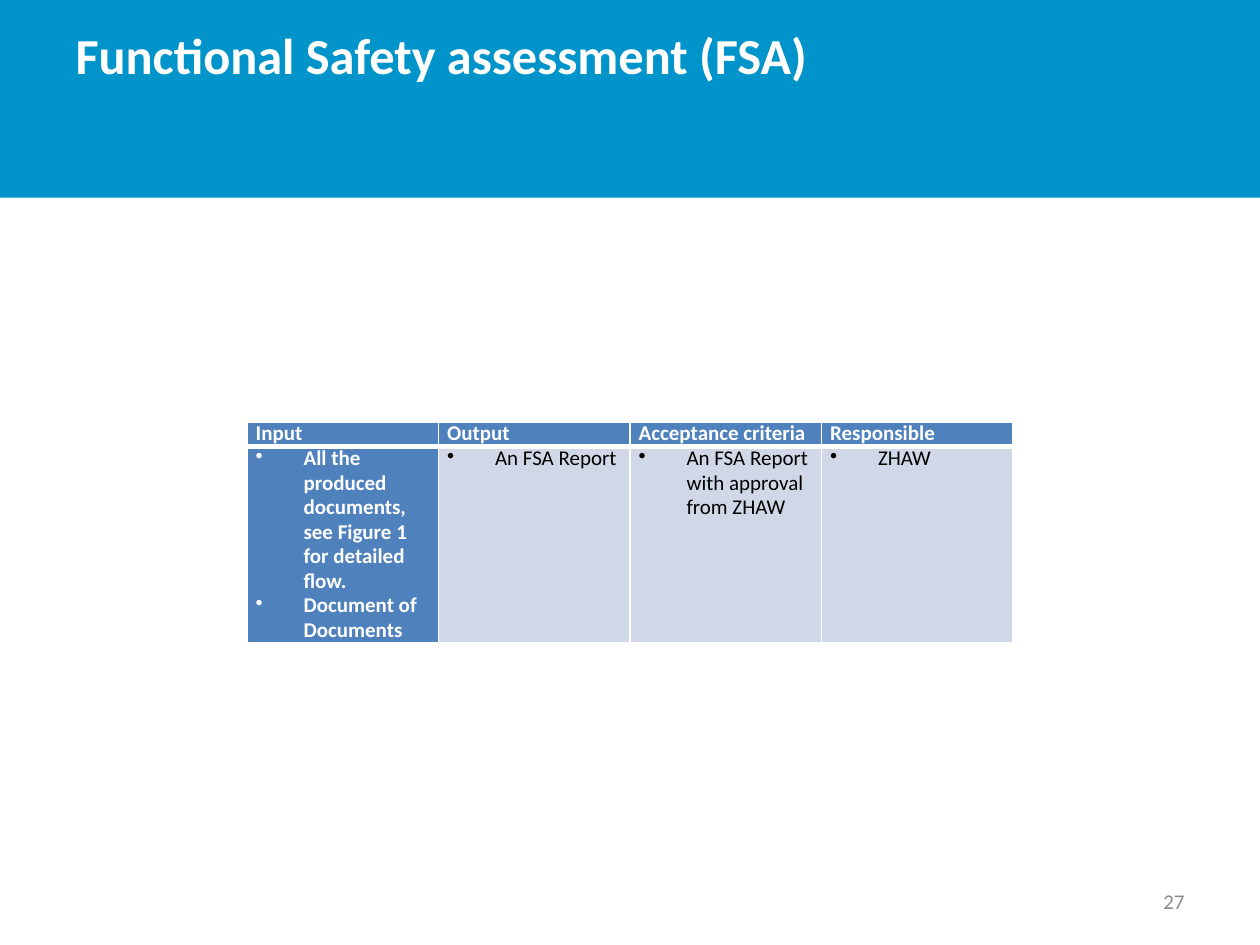
from lxml.etree import SubElement
from pptx import Presentation
from pptx.dml.color import RGBColor
from pptx.enum.shapes import MSO_SHAPE
from pptx.enum.text import MSO_ANCHOR, PP_ALIGN
from pptx.oxml import parse_xml
from pptx.oxml.ns import nsdecls, qn
from pptx.util import Inches, Pt

COLORS = {"band": "0094CA", "head": "4F81BD", "cell": "D0D8E8",
          "white": "FFFFFF", "black": "000000", "gray": "8C8C8C"}


def style(par, size, color, bold=False):
    font = par.font
    for key, value in {"name": "Calibri", "size": Pt(size), "bold": bold}.items():
        setattr(font, key, value)
    font.color.rgb = RGBColor.from_string(COLORS[color])


def edge(cell, widths):
    """Draw white cell borders; widths maps each side to points."""
    props = cell._tc.get_or_add_tcPr()
    for spot, (side, width) in enumerate(widths.items()):
        props.insert(spot, parse_xml(
            f'<a:ln{side} {nsdecls("a")} w="{Pt(width)}"><a:solidFill>'
            f'<a:srgbClr val="{COLORS["white"]}"/></a:solidFill></a:ln{side}>'))


deck = Presentation()
deck.slide_width, deck.slide_height = Inches(10), Inches(7.5)
slide = deck.slides.add_slide(deck.slide_layouts[5])

# Title on a band
title = slide.shapes.title
band = slide.shapes.add_shape(MSO_SHAPE.RECTANGLE, 0, 0, Inches(10), Inches(1.57))
band.shadow.inherit = False
band.fill.solid()
band.fill.fore_color.rgb = RGBColor.from_string(COLORS["band"])
band.line.fill.background()
title.element.addprevious(band.element)

title.left, title.top = Inches(0.5), Inches(0.19)
title.width, title.height = Inches(7.81), Inches(1.36)
frame = title.text_frame
frame.text = "Functional Safety assessment (FSA)"
frame.vertical_anchor = MSO_ANCHOR.TOP
frame.margin_top = 0
frame.paragraphs[0].alignment = PP_ALIGN.LEFT
style(frame.paragraphs[0], 28.8, "white", True)

# Table
columns = {
    "Input": ["All the produced documents, see Figure 1 for detailed flow.",
              "Document of Documents"],
    "Output": ["An FSA Report"],
    "Acceptance criteria": ["An FSA Report with approval from ZHAW"],
    "Responsible": ["ZHAW"],
}
table = slide.shapes.add_table(2, len(columns), Inches(1.96), Inches(3.35),
                               Inches(6.08), Inches(1.75)).table
for row, height in zip(table.rows, (0.19, 1.56)):
    row.height = Inches(height)

for col, (head, items) in enumerate(columns.items()):
    table.columns[col].width = Inches(1.52)
    for row, lines in enumerate(([head], items)):
        cell = table.cell(row, col)
        strong = row == 0 or col == 0
        cell.fill.solid()
        cell.fill.fore_color.rgb = RGBColor.from_string(
            COLORS["head" if strong else "cell"])
        cell.margin_left = cell.margin_right = Inches(0.07)
        cell.margin_top = cell.margin_bottom = 0
        edge(cell, {"L": 1, "R": 1, "T": 3 if row else 1, "B": 1 if row else 3})
        cell.text = "\n".join(lines)
        for par in cell.text_frame.paragraphs:
            par.line_spacing = Pt(14)
            if row:
                props = par._p.get_or_add_pPr()
                props.set("marL", str(Inches(0.38)))
                props.set("indent", str(Inches(-0.38)))
                SubElement(props, qn("a:buChar"), char="•")
            style(par, 12, "white" if strong else "black", strong)

# Slide number
number = slide.shapes.add_textbox(Inches(7.17), Inches(6.95), Inches(2.33), Inches(0.4))
frame = number.text_frame
frame.word_wrap = True
frame.vertical_anchor = MSO_ANCHOR.MIDDLE
frame.text = "27"
frame.paragraphs[0].alignment = PP_ALIGN.RIGHT
style(frame.paragraphs[0], 12, "gray")

deck.save("out.pptx")
